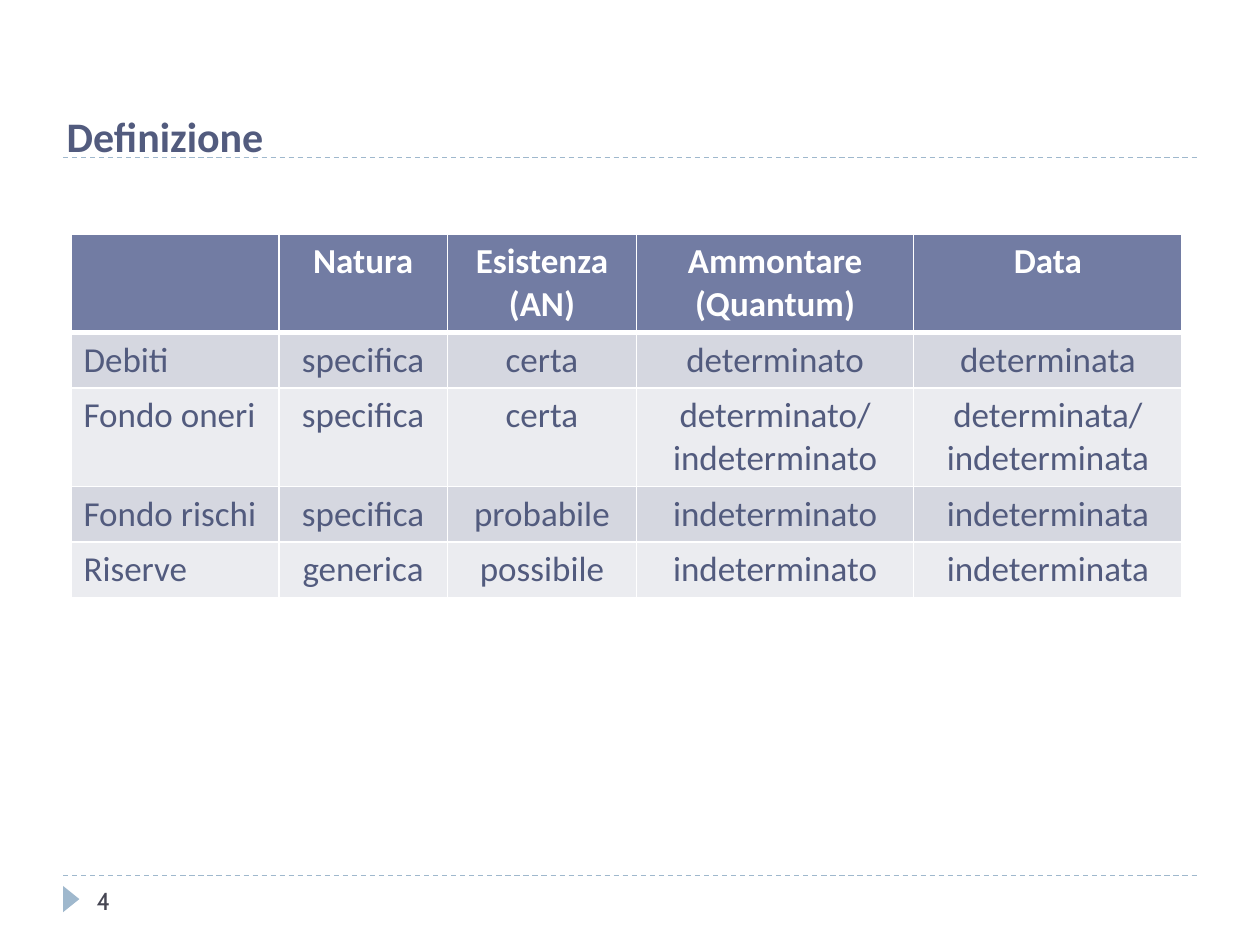
from lxml.etree import SubElement
from pptx import Presentation
from pptx.dml.color import RGBColor
from pptx.enum.dml import MSO_LINE
from pptx.enum.shapes import MSO_CONNECTOR, MSO_SHAPE
from pptx.enum.text import MSO_ANCHOR, PP_ALIGN
from pptx.oxml.ns import qn
from pptx.util import Cm, Pt

WHITE = RGBColor(0xFF, 0xFF, 0xFF)
SLATE = RGBColor(0x52, 0x5B, 0x7E)
HEADER_BLUE = RGBColor(0x72, 0x7C, 0xA3)
BAND_DARK = RGBColor(0xD5, 0xD7, 0xE0)
BAND_LIGHT = RGBColor(0xEB, 0xEC, 0xF0)
ACCENT = RGBColor(0x9F, 0xB8, 0xCD)
NUMBER_GREY = RGBColor(0x46, 0x46, 0x53)

COLUMN_WIDTHS = [4.19, 3.4, 3.81, 5.59, 5.41]
ROW_HEIGHTS = [1.93, 1.09, 1.95, 1.09, 1.09]
ROWS = [
    ["", "Natura", "Esistenza (AN)", "Ammontare (Quantum)", "Data"],
    ["Debiti", "specifica", "certa", "determinato", "determinata"],
    ["Fondo oneri", "specifica", "certa",
     "determinato/\nindeterminato", "determinata/\nindeterminata"],
    ["Fondo rischi", "specifica", "probabile", "indeterminato", "indeterminata"],
    ["Riserve", "generica", "possibile", "indeterminato", "indeterminata"],
]


def format_text(text_frame, size, color, name="Calibri", bold=False, align=PP_ALIGN.LEFT):
    for paragraph in text_frame.paragraphs:
        paragraph.alignment = align
        font = paragraph.font
        font.name, font.size, font.bold = name, Pt(size), bold
        font.color.rgb = color


def add_title(slide, text):
    title = slide.shapes.title
    title.left, title.top, title.width, title.height = Cm(1.09), Cm(2.11), Cm(22.63), Cm(1.27)
    title.text = text
    title.text_frame.vertical_anchor = MSO_ANCHOR.MIDDLE
    format_text(title.text_frame, 24, SLATE, bold=True)


def add_dashed_rule(slide, top):
    rule = slide.shapes.add_connector(
        MSO_CONNECTOR.STRAIGHT, Cm(1.27), Cm(top), Cm(24.13), Cm(top))
    rule.line.color.rgb = ACCENT
    rule.line.width = Pt(0.75)
    rule.line.dash_style = MSO_LINE.DASH
    SubElement(rule._element.spPr, qn("a:effectLst"))


def set_borders(cell, top, bottom):
    properties = cell._tc.get_or_add_tcPr()
    for side, width in (("L", 1), ("R", 1), ("T", top), ("B", bottom)):
        line = SubElement(properties, qn(f"a:ln{side}"), w=str(Pt(width)))
        fill = SubElement(line, qn("a:solidFill"))
        SubElement(fill, qn("a:srgbClr"), val=str(WHITE))


def add_definition_table(slide):
    table = slide.shapes.add_table(
        len(ROWS), len(COLUMN_WIDTHS), Cm(1.43), Cm(4.72),
        Cm(sum(COLUMN_WIDTHS)), Cm(sum(ROW_HEIGHTS))).table
    for column, width in zip(table.columns, COLUMN_WIDTHS):
        column.width = Cm(width)
    for row, height in zip(table.rows, ROW_HEIGHTS):
        row.height = Cm(height)

    for row_index, texts in enumerate(ROWS):
        is_header = row_index == 0
        band = BAND_DARK if row_index % 2 else BAND_LIGHT
        for column_index, text in enumerate(texts):
            cell = table.cell(row_index, column_index)
            cell.text = text
            set_borders(cell, top=3 if row_index == 1 else 1, bottom=3 if is_header else 1)
            cell.fill.solid()
            cell.fill.fore_color.rgb = HEADER_BLUE if is_header else band
            format_text(cell.text_frame, 20, WHITE if is_header else SLATE, bold=is_header,
                        align=PP_ALIGN.CENTER if column_index else PP_ALIGN.LEFT)


def add_page_marker(slide):
    triangle = slide.shapes.add_shape(
        MSO_SHAPE.ISOSCELES_TRIANGLE, Cm(1.17), Cm(17.96), Cm(0.53), Cm(0.33))
    triangle.rotation = 90
    triangle.shadow.inherit = False
    triangle.fill.solid()
    triangle.fill.fore_color.rgb = ACCENT
    triangle.line.fill.background()


def add_page_number(slide, number):
    box = slide.shapes.add_textbox(Cm(1.7), Cm(17.65), Cm(5.51), Cm(1.02))
    box.text_frame.word_wrap = True
    box.text_frame.vertical_anchor = MSO_ANCHOR.MIDDLE
    box.text_frame.text = number
    format_text(box.text_frame, 14, NUMBER_GREY, name="Cabin")


def main():
    presentation = Presentation()
    presentation.slide_width, presentation.slide_height = Cm(25.4), Cm(19.05)
    slide = presentation.slides.add_slide(presentation.slide_layouts[5])

    # Frame: rules under the title and above the footer
    for top in (17.65, 3.18):
        add_dashed_rule(slide, top)
    add_page_marker(slide)

    # Content
    add_title(slide, "Definizione")
    add_definition_table(slide)
    add_page_number(slide, "4")

    presentation.save("out.pptx")


if __name__ == "__main__":
    main()
